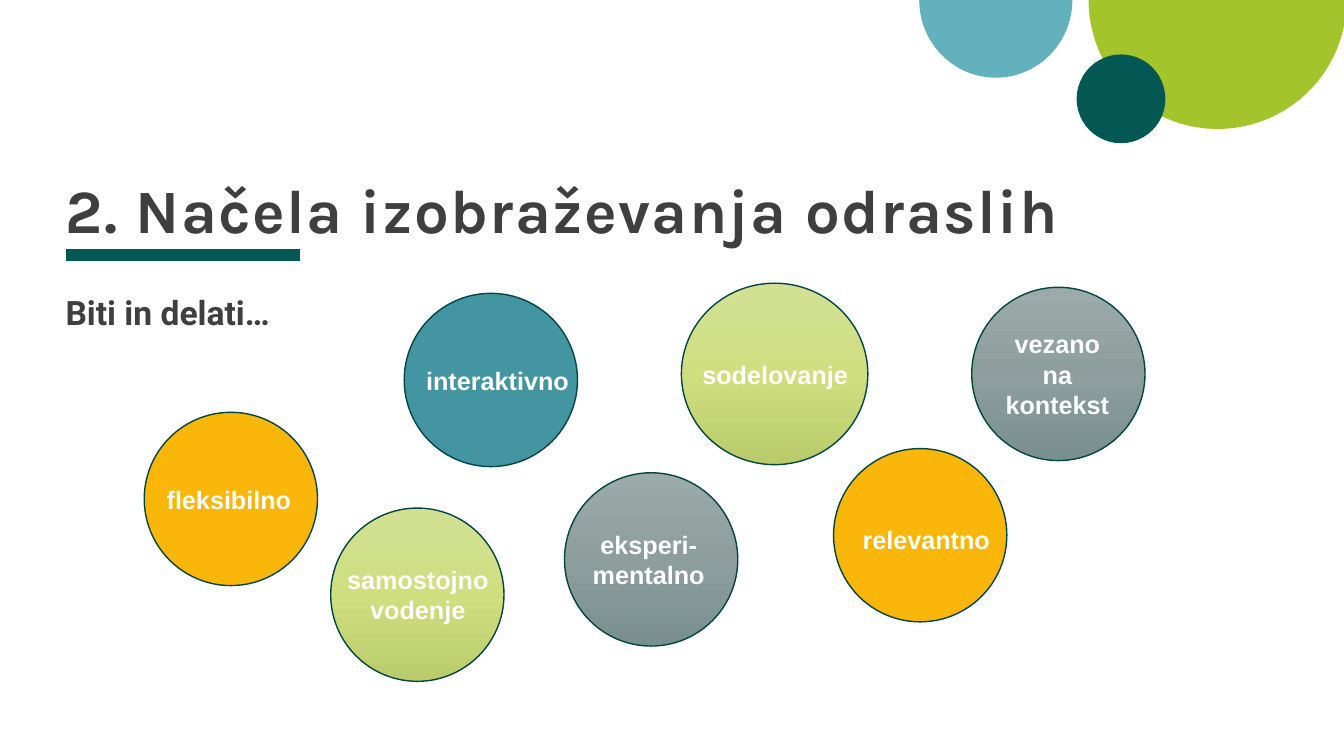
from copy import deepcopy
from dataclasses import dataclass

from pptx import Presentation
from pptx.dml.color import RGBColor
from pptx.enum import shapes, text
from pptx.oxml.ns import qn
from pptx.oxml.xmlchemy import OxmlElement
from pptx.util import Pt

SHAPE = shapes.MSO_SHAPE


@dataclass(frozen=True)
class Theme:
    ink: str = "3F3F3F"
    white: str = "FFFFFF"
    dark: str = "035854"
    outline: str = "024643"
    lime: str = "A3C42A"
    sky: str = "64B1BE"
    teal: str = "4495A2"
    amber: str = "FAB609"
    green_fade: tuple = ("D2E093", "CFDF80", "BACB6C")
    grey_fade: tuple = ("9AABA9", "8D9E9D", "78908E")
    title_size: int = 44
    lead_size: int = 24
    label_size: int = 18


THEME = Theme()
MARGIN = 46.8
TEXT_WIDTH = 870.5
DIAMETER = 123.8

# label, label lines, fill, left, top, label offset, label width
PRINCIPLES = [
    ("sodelovanje", 1, THEME.green_fade, 486.7, 202.3, 9.4, 115.2),
    ("eksperi-mentalno", 2, THEME.grey_fade, 403.2, 337.7, 9.4, 101.5),
    ("fleksibilno", 1, THEME.amber, 103, 294.5, 10.8, 99.4),
    ("samostojno vodenje", 2, THEME.green_fade, 236.2, 362.9, 7.9, 108.7),
    ("vezano na kontekst", 3, THEME.grey_fade, 694.1, 205.2, 18, 86.4),
    ("relevantno", 1, THEME.amber, 595.4, 320.4, 15.8, 100.8),
    ("interaktivno", 1, THEME.teal, 288.7, 209.5, 9.4, 114.5),
]
SIZES = {"sodelovanje": (133.2, 129.6)}
LABEL_DROP = {"relevantno": 2.9}


def rgb(value):
    return RGBColor.from_string(value)


def box(left, top, width, height):
    return Pt(left), Pt(top), Pt(width), Pt(height)


def write(sp, content, *, font, size, color, align=text.PP_ALIGN.LEFT,
          anchor=text.MSO_ANCHOR.TOP, inset=0, line_spacing=None, tracking=None):
    tf = sp.text_frame
    tf.word_wrap = True
    tf.auto_size = text.MSO_AUTO_SIZE.SHAPE_TO_FIT_TEXT
    tf.vertical_anchor = anchor
    tf.margin_left = tf.margin_right = tf.margin_top = tf.margin_bottom = Pt(inset)
    p = tf.paragraphs[0]
    p.alignment = align
    if line_spacing:
        p.line_spacing = line_spacing
    r = p.add_run()
    r.text = content
    r.font.name, r.font.size, r.font.bold = font, Pt(size), True
    r.font.color.rgb = rgb(color)
    if tracking:
        r.font._element.set("spc", str(tracking * 100))


def fade(sp, colors):
    """Fill a shape with an even top-to-bottom gradient."""
    sp.fill.gradient()
    sp.fill.gradient_angle = 270
    stops = sp._element.spPr.find(".//" + qn("a:gsLst"))
    stops.append(deepcopy(stops[0]))
    for i, (stop, color) in enumerate(zip(sp.fill.gradient_stops, colors)):
        stop.color.rgb = rgb(color)
        stop.position = i / (len(colors) - 1)


def add_disc(parent, kind, bounds, fill, outline=None):
    sp = parent.add_shape(kind, *box(*bounds))
    sp.shadow.inherit = False
    if isinstance(fill, tuple):
        fade(sp, fill)
    else:
        sp.fill.solid()
        sp.fill.fore_color.rgb = rgb(fill)
    if outline:
        sp.line.color.rgb = rgb(outline)
        sp.line.width = Pt(1)
    else:
        sp.line.fill.background()
    return sp


def add_half_disc(parent, bounds, fill):
    sp = add_disc(parent, SHAPE.PIE, bounds, fill)
    sp.adjustments[0] = 0
    sp.adjustments[1] = 108  # 180 degrees


def add_rule(parent, left, right, y, color, width):
    line = parent.add_connector(shapes.MSO_CONNECTOR.STRAIGHT,
                                Pt(left), Pt(y), Pt(right), Pt(y))
    line.line.color.rgb = rgb(color)
    line.line.width = Pt(width)
    line._element.spPr.append(OxmlElement("a:effectLst"))


def add_principle(parent, label, lines, fill, left, top, offset, label_width):
    group = parent.add_group_shape().shapes
    width, height = SIZES.get(label, (DIAMETER, DIAMETER))
    add_disc(group, SHAPE.OVAL, (left, top, width, height), fill, THEME.outline)
    label_height = 22 * lines + 7
    label_top = top + (height - label_height) / 2 + LABEL_DROP.get(label, 0)
    tb = group.add_textbox(*box(left + offset, label_top, label_width, label_height))
    write(tb, label, font="Arial", size=THEME.label_size, color=THEME.white,
          align=text.PP_ALIGN.CENTER, anchor=text.MSO_ANCHOR.MIDDLE, inset=3.6)


def main():
    prs = Presentation()
    prs.slide_width, prs.slide_height = Pt(960), Pt(540)
    s = prs.slides.add_slide(prs.slide_layouts[5])

    add_rule(s.shapes, MARGIN, 214.6, 182.2, THEME.dark, 8)
    add_half_disc(s.shapes, (777.6, -92.2, 184.3, 184.3), THEME.lime)
    add_half_disc(s.shapes, (656.6, -55.4, 109.4, 110.9), THEME.sky)
    add_disc(s.shapes, SHAPE.OVAL, (769, 38.9, 63.4, 63.4), THEME.dark)

    title = s.shapes.title
    title.left, title.top, title.width, title.height = box(MARGIN, 132.5, TEXT_WIDTH, 42.5)
    write(title, "2. Načela izobraževanja odraslih", font="Karla",
          size=THEME.title_size, color=THEME.ink, anchor=text.MSO_ANCHOR.BOTTOM,
          line_spacing=0.8, tracking=1)

    lead = s.shapes.add_textbox(*box(MARGIN, 208.8, TEXT_WIDTH, 28.8))
    write(lead, "Biti in delati…", font="Roboto", size=THEME.lead_size, color=THEME.ink)

    for principle in PRINCIPLES:
        add_principle(s.shapes, *principle)

    prs.save("out.pptx")


if __name__ == "__main__":
    main()
